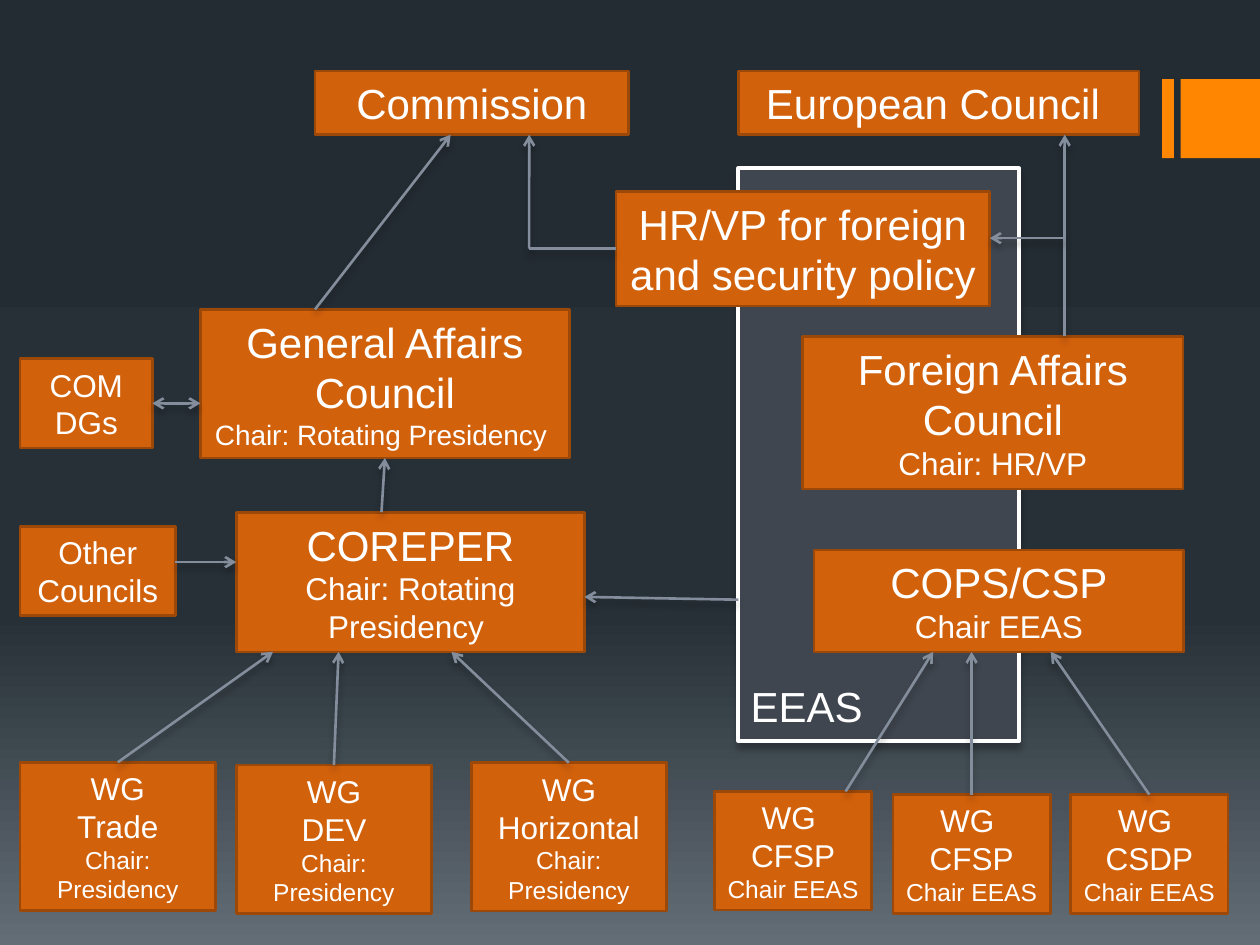
from copy import deepcopy

from lxml import etree
from pptx import Presentation
from pptx import util as u
from pptx.dml import color
from pptx.enum import shapes, text
from pptx.oxml import ns

TOP, LEFT, BOTTOM, RIGHT = range(4)
FONT = "Arial"
BOX_FILL, BOX_LINE, WHITE = "D2610C", "9B4809", "FFFFFF"
PANEL_FILL, ARROW, ACCENT = "40464F", "838D9B", "FF8600"
BACKGROUND = [("242C33", 0), ("273037", 0.65), ("636D76", 1)]

BOXES = {
    "Commission": ((180, 40.6, 179.2, 36.4), [("Commission", 24)]),
    "European": ((421.9, 40.6, 229, 36.4), [("European Council ", 24)]),
    "HRVP": ((352, 109.4, 213.6, 65.4), [("HR/VP for foreign and security policy ", 24)]),
    "Foreign": ((458.6, 192.3, 217.5, 87.2), [("Foreign Affairs Council", 24), ("Chair: HR/VP", 18)]),
    "General": ((114.5, 176.8, 210.9, 84.9),
                [("General Affairs Council", 24), ("Chair: Rotating Presidency ", 16)]),
    "COREPER": ((135, 292.7, 199, 79.8), [("COREPER", 24), ("Chair: Rotating Presidency ", 18)]),
    "COPS": ((465.2, 314.3, 211.2, 58.2), [("COPS/CSP", 24), ("Chair EEAS", 18)]),
    "DGs": ((11.5, 205, 75.6, 51), [("COM", 18), ("DGs", 18)]),
    "Others": ((11.5, 300.7, 88.7, 51), [("Other Councils", 18)]),
}

PRESIDENCY_GROUPS = [("Trade", 11.5, 435.6), ("DEV", 135, 437.2), ("Horizontal", 269.3, 435.9)]
EEAS_GROUPS = [("CFSP", 408.2, 452.3), ("CFSP", 510.2, 454.1), ("CSDP", 611.8, 454.1)]

CORNER, JUNCTION = (302.4, 142.1), (608.4, 136.1)

# Each end is a free point, or a box, its side and the offset along it (None: the middle).
CONNECTORS = [
    (("DEV", TOP, None), ("COREPER", BOTTOM, 58.5)),
    (("Trade", TOP, None), ("COREPER", BOTTOM, 21)),
    (("Horizontal", TOP, None), ("COREPER", BOTTOM, 123)),
    (("COREPER", TOP, 83), ("General", BOTTOM, None)),
    (("EEAS", LEFT, 246.5), ("COREPER", RIGHT, 48.4)),
    (("Others", RIGHT, 20.5), ("COREPER", LEFT, 28.5)),
    (("General", TOP, 65.5), ("Commission", BOTTOM, 77.5)),
    (CORNER, ("Commission", BOTTOM, 122.4)),
    (("Foreign", TOP, 149.8), ("European", BOTTOM, 186.5)),
    (JUNCTION, ("HRVP", RIGHT, 26.7)),
    (("EEAS 1", TOP, 75), ("COPS", BOTTOM, 68)),
    (("EEAS 2", TOP, None), ("COPS", BOTTOM, 90)),
    (("EEAS 3", TOP, None), ("COPS", BOTTOM, 135.3)),
]


def rgb(value):
    return color.RGBColor.from_string(value)


def paint_background(slide):
    fill = slide.background.fill
    fill.gradient()
    fill.gradient_angle = 270
    stops = next(slide.element.iter(ns.qn("a:gsLst")))
    stops.append(deepcopy(stops[-1]))
    for stop, (value, position) in zip(fill.gradient_stops, BACKGROUND):
        stop.color.rgb = rgb(value)
        stop.position = position


def add_shadow(shape):
    properties = shape.element.spPr
    effects = properties.find(ns.qn("a:effectLst"))
    if effects is None:
        effects = etree.SubElement(properties, ns.qn("a:effectLst"))
    shadow = etree.SubElement(effects, ns.qn("a:outerShdw"), blurRad=str(u.Pt(4)),
                              dist=str(u.Pt(3)), dir="5400000", rotWithShape="0")
    black = etree.SubElement(shadow, ns.qn("a:srgbClr"), val="000000")
    etree.SubElement(black, ns.qn("a:alpha"), val="28000")


def add_rectangle(slide, box, fill, line=None, width=1.5):
    shape = slide.shapes.add_shape(shapes.MSO_SHAPE.RECTANGLE, *map(u.Pt, box))
    shape.shadow.inherit = False
    shape.fill.solid()
    shape.fill.fore_color.rgb = rgb(fill)
    if line:
        shape.line.color.rgb = rgb(line)
        shape.line.width = u.Pt(width)
    else:
        shape.line.fill.background()
    return shape


def write(shape, lines, alignment=text.PP_ALIGN.CENTER, wrap=True):
    frame = shape.text_frame
    frame.word_wrap = wrap
    frame.vertical_anchor = text.MSO_ANCHOR.MIDDLE
    frame.text = "\n".join(words for words, size in lines)
    for paragraph, (words, size) in zip(frame.paragraphs, lines):
        paragraph.alignment = alignment
        paragraph.font.name = FONT
        paragraph.font.size = u.Pt(size)
        paragraph.font.color.rgb = rgb(WHITE)


def draw_accent(slide, left, top, size):
    add_rectangle(slide, (left, top, 6.7, size), ACCENT)
    add_rectangle(slide, (left + 10.6, top, size, size), ACCENT)


def draw_panel(slide, box):
    panel = add_rectangle(slide, box, PANEL_FILL, WHITE, 2.25)
    add_shadow(panel)
    write(panel, [("EEAS", 24)], text.PP_ALIGN.LEFT)
    panel.text_frame.vertical_anchor = text.MSO_ANCHOR.BOTTOM
    panel.text_frame.margin_bottom = u.Pt(6)
    return panel


def draw_box(slide, box, lines, wrap=True):
    shape = add_rectangle(slide, box, BOX_FILL, BOX_LINE)
    write(shape, lines, wrap=wrap)
    return shape


def draw_working_groups(slide, boxes):
    for name, left, top in PRESIDENCY_GROUPS:
        boxes[name] = draw_box(slide, (left, top, 111.6, 84.8),
                               [("WG", 18), (name, 18), ("Chair: Presidency", 14)])
    for number, (name, left, top) in enumerate(EEAS_GROUPS, 1):
        boxes[f"EEAS {number}"] = draw_box(slide, (left, top, 90, 67.8),
                                           [("WG ", 18), (name, 18), ("Chair EEAS", 14)], wrap=False)


def locate(boxes, end):
    if len(end) == 2:
        return [u.Pt(value) for value in end]
    name, side, offset = end
    shape = boxes[name]
    if side in (TOP, BOTTOM):
        along = shape.width // 2 if offset is None else u.Pt(offset)
        return [shape.left + along, shape.top + (shape.height if side == BOTTOM else 0)]
    along = shape.height // 2 if offset is None else u.Pt(offset)
    return [shape.left + (shape.width if side == RIGHT else 0), shape.top + along]


def draw_connector(slide, boxes, start, end, heads=("tailEnd",)):
    connector = slide.shapes.add_connector(
        shapes.MSO_CONNECTOR.STRAIGHT, *locate(boxes, start), *locate(boxes, end))
    for target, join in ((start, connector.begin_connect), (end, connector.end_connect)):
        if len(target) == 3 and target[2] is None:
            join(boxes[target[0]], target[1])
    connector.line.color.rgb = rgb(ARROW)
    connector.line.width = u.Pt(1.5)
    line = connector.line._get_or_add_ln()
    for head in heads:
        etree.SubElement(line, ns.qn(f"a:{head}"), type="arrow")
    add_shadow(connector)


def main():
    presentation = Presentation()
    presentation.slide_width, presentation.slide_height = u.Pt(720), u.Pt(540)
    slide = presentation.slides.add_slide(presentation.slide_layouts[6])
    paint_background(slide)
    draw_accent(slide, 664.1, 45.2, 45.2)
    boxes = {"EEAS": draw_panel(slide, (421.9, 96.2, 160.4, 327.2))}
    for name, (box, lines) in BOXES.items():
        boxes[name] = draw_box(slide, box, lines)
    draw_working_groups(slide, boxes)
    for start, end in CONNECTORS:
        draw_connector(slide, boxes, start, end)
    draw_connector(slide, boxes, ("HRVP", LEFT, None), CORNER, heads=())
    draw_connector(slide, boxes, ("DGs", RIGHT, None), ("General", LEFT, 53.7),
                   heads=("headEnd", "tailEnd"))
    presentation.save("out.pptx")


if __name__ == "__main__":
    main()
